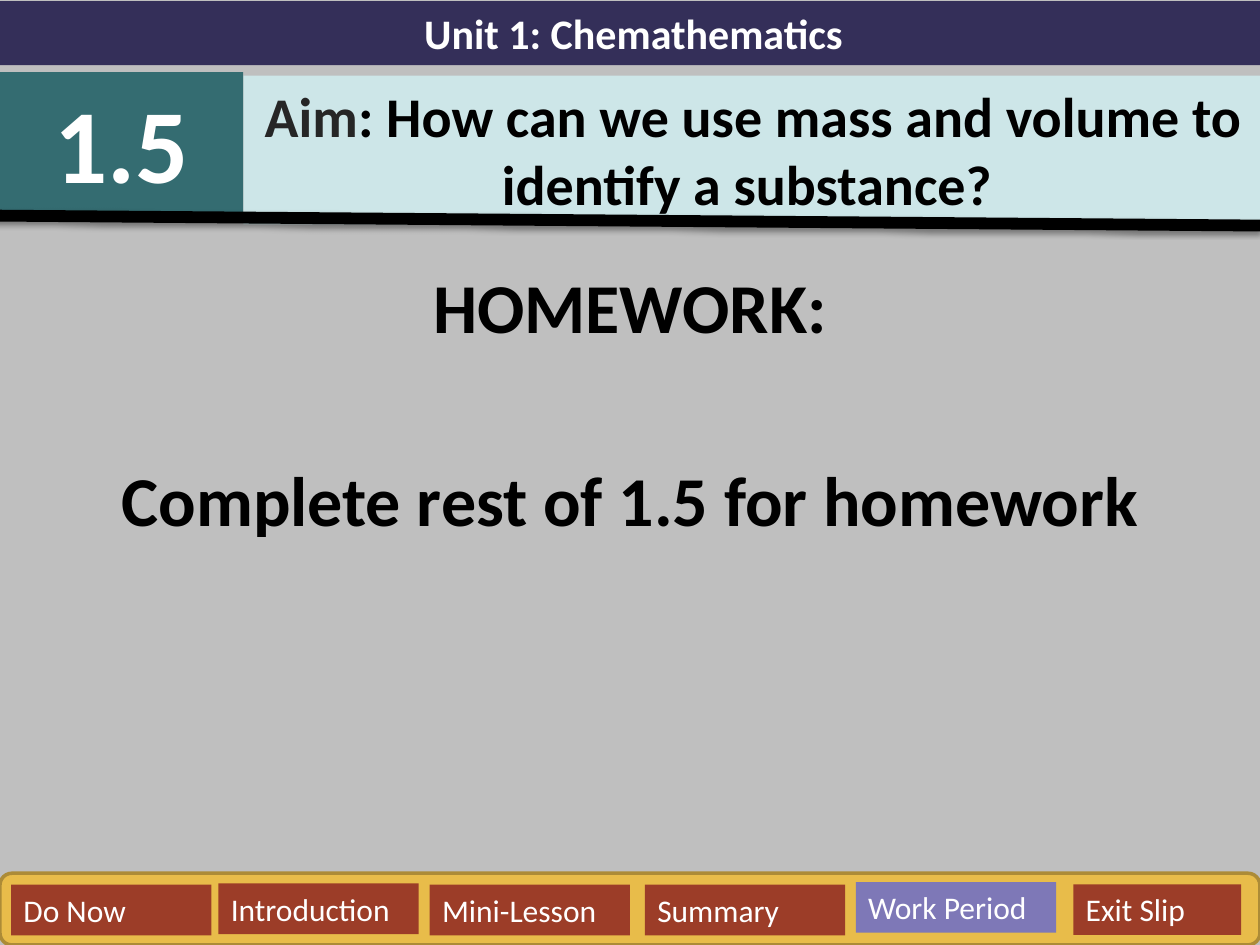
import pptx
import pptx.dml.color
import pptx.enum.shapes
import pptx.enum.text
import pptx.oxml
import pptx.oxml.ns
import pptx.util

Pt = pptx.util.Pt
SHAPES = pptx.enum.shapes.MSO_SHAPE
CENTER = pptx.enum.text.PP_ALIGN.CENTER
LEFT = pptx.enum.text.PP_ALIGN.LEFT
TOP = pptx.enum.text.MSO_ANCHOR.TOP
NO_FIT = pptx.enum.text.MSO_AUTO_SIZE.NONE
GROW = pptx.enum.text.MSO_AUTO_SIZE.SHAPE_TO_FIT_TEXT

BLACK, WHITE = "000000", "FFFFFF"
LINE_SHADOW = (
    f'<a:effectLst {pptx.oxml.ns.nsdecls("a")}>'
    '<a:outerShdw blurRad="39370" dist="20320" dir="5400000" rotWithShape="0">'
    '<a:srgbClr val="000000"><a:alpha val="38000"/></a:srgbClr>'
    '</a:outerShdw></a:effectLst>'
)


def paint(color_format, color):
    color_format.rgb = pptx.dml.color.RGBColor.from_string(color)


def fill_with(shape, color):
    shape.fill.solid()
    paint(shape.fill.fore_color, color)


def place(shape, box):
    shape.left, shape.top, shape.width, shape.height = map(Pt, box)


def add_run(para, text, size, color, bold=True):
    span = para.add_run()
    span.text = text
    span.font.name = "Calibri"
    span.font.size = Pt(size)
    span.font.bold = bold
    paint(span.font.color, color)


def prepare_text(shape, fit, align=CENTER):
    """Set up the text frame and return its first paragraph."""
    frame = shape.text_frame
    frame.word_wrap = True
    frame.vertical_anchor = TOP
    frame.auto_size = fit
    para = frame.paragraphs[0]
    para.alignment = align
    para.space_before = Pt(0)
    return para


def add_block(shapes, box, color, kind=SHAPES.RECTANGLE):
    block = shapes.add_shape(kind, *map(Pt, box))
    block.shadow.inherit = False
    block.line.fill.background()
    fill_with(block, color)
    return block


def add_label(shapes, box, color, text, size, align=CENTER, bold=True):
    block = add_block(shapes, box, color)
    add_run(prepare_text(block, GROW, align), text, size, WHITE, bold)


def fill_homework(page, box):
    body = page.placeholders[1]
    place(body, box)
    heading = prepare_text(body, NO_FIT)
    add_run(heading, "HOMEWORK:", 40, BLACK)
    task = body.text_frame.add_paragraph()
    task.alignment = CENTER
    task.space_before = Pt(62.5)
    add_run(task, "Complete rest of 1.5 for homework", 40, BLACK)


def add_header(page, box):
    """Unit bar, lesson number, aim and the rule below them."""
    left, top, width, _ = box
    number_width = 139
    add_label(page.shapes, (left, top, width + 4, 36.5), "342F59",
              "Unit 1: Chemathematics", 24)
    add_label(page.shapes, (left, top + 40.5, number_width, 80), "346C71", "1.5", 60)

    aim = page.shapes.title
    place(aim, (left + number_width, top + 42.5, 583, 85))
    fill_with(aim, "CDE6E8")
    para = prepare_text(aim, NO_FIT)
    add_run(para, "Aim", 32, "262626")
    add_run(para, ": How can we use mass and volume to identify a substance? ", 32, BLACK)

    rule = page.shapes.add_connector(
        pptx.enum.shapes.MSO_CONNECTOR.STRAIGHT,
        Pt(left - 3.5), Pt(top + 122.5), Pt(left + width), Pt(top + 128.2))
    rule.line.width = Pt(6.75)
    paint(rule.line.color, BLACK)
    rule.element.spPr.append(pptx.oxml.parse_xml(LINE_SHADOW))


def add_navigation(page, box):
    """Rounded bar with one button for each part of the lesson."""
    left, top, width, height = box
    group = page.shapes.add_group_shape()
    bar = add_block(group.shapes, box, "E8BC4A", SHAPES.ROUNDED_RECTANGLE)
    bar.line.width = Pt(2)
    paint(bar.line.color, "AC8B37")

    brick, violet = "9C3D28", "7E78B7"
    buttons = [
        ("Do Now", 6.3, 6.5, 114.5, brick),
        ("Introduction", 124.8, 5.8, 114.5, brick),
        ("Mini-Lesson", 245.5, 6.5, 114.5, brick),
        ("Summary", 368.5, 6.5, 114.5, brick),
        ("Work Period", 489, 5, 114.5, violet),
        ("Exit Slip", 613.3, 6.3, 96, brick),
    ]
    for text, across, down, button_width, color in buttons:
        add_label(group.shapes, (left + across, top + down, button_width, 29),
                  color, text, 18, LEFT, False)


def build_homework_slide(deck):
    page = deck.slides.add_slide(deck.slide_layouts[0])
    page.background.fill.solid()
    paint(page.background.fill.fore_color, "BFBFBF")
    fill_homework(page, (0, 147, 720, 393))
    add_header(page, (0, 0.7, 720, 129))
    add_navigation(page, (0, 499, 720, 41))


def main():
    deck = pptx.Presentation()
    deck.slide_width, deck.slide_height = Pt(720), Pt(540)
    build_homework_slide(deck)
    deck.save("out.pptx")


if __name__ == "__main__":
    main()
